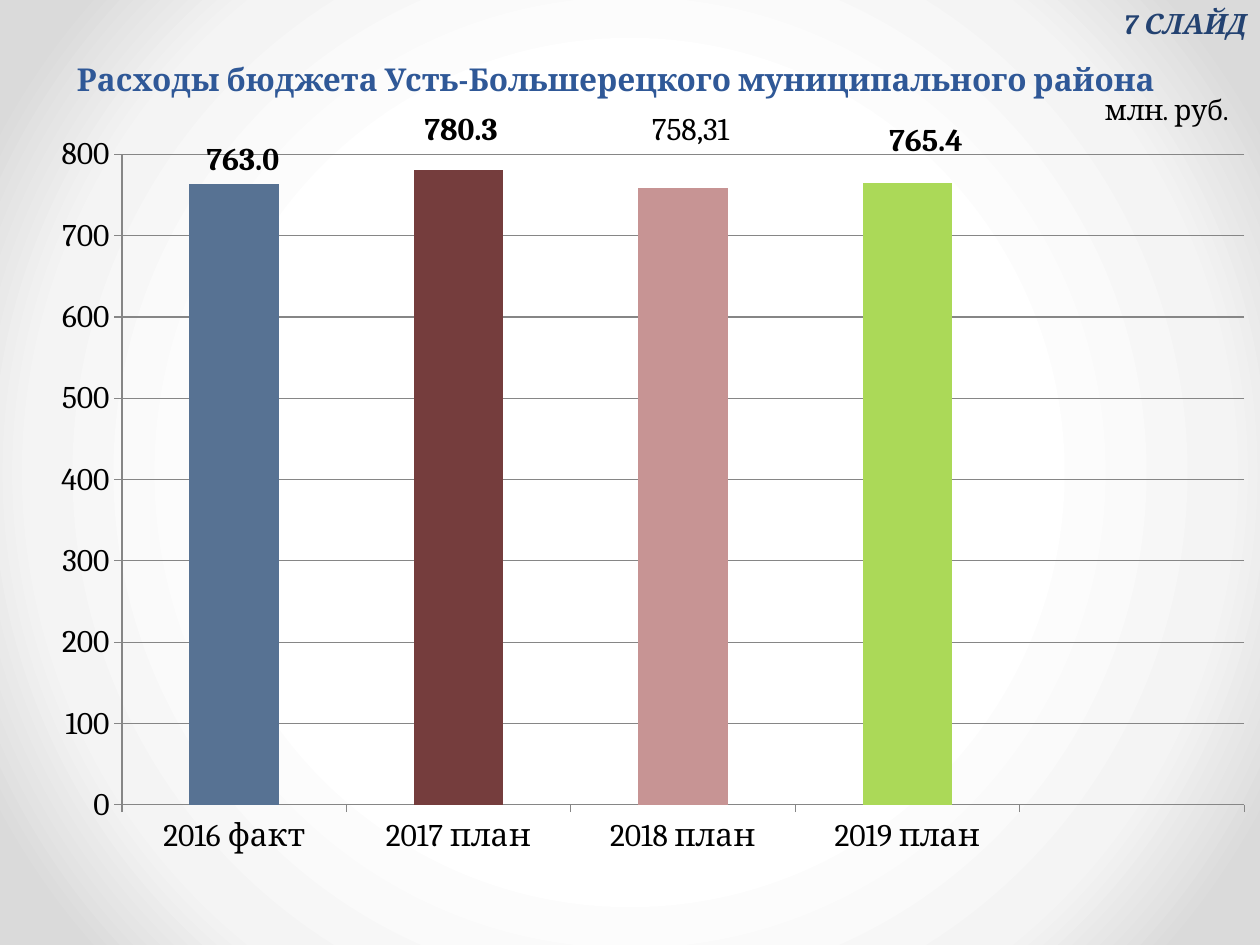
from dataclasses import dataclass

from lxml import etree
from pptx import Presentation
from pptx.chart.data import CategoryChartData
from pptx.dml.color import RGBColor
from pptx.enum.chart import XL_CHART_TYPE, XL_TICK_MARK
from pptx.enum.text import MSO_ANCHOR, PP_ALIGN
from pptx.oxml import parse_xml
from pptx.oxml.ns import nsdecls, qn
from pptx.util import Inches, Pt

STACKED = XL_CHART_TYPE.COLUMN_STACKED
OUTSIDE = XL_TICK_MARK.OUTSIDE
LEFT, RIGHT = PP_ALIGN.LEFT, PP_ALIGN.RIGHT
TOP = MSO_ANCHOR.TOP


@dataclass(frozen=True)
class Theme:
    font: str = "Cambria"
    head: str = "2F5897"
    tag: str = "234271"
    ink: str = "000000"
    grid: str = "868686"
    large: int = 18
    small: int = 16
    back: tuple = ((50, "FFFFFF"), (76, "F4F4F4"), (92, "DADADA"))


THEME = Theme()

# Category, value, bar colour, label shift from bar centre, custom label
BARS = [
    ("2016 факт", 763.0, "577293", (0.007, -0.389), None),
    ("2017 план", 780.3, "753D3D", (0.002, -0.416), None),
    ("2018 план", 758.3, "C79494", (0.006, -0.427), "758,31"),
    ("2019 план", 765.4, "ABD958", (0.015, -0.411), None),
]


def style(font, size, color, bold=False, italic=False):
    font.name, font.size = THEME.font, Pt(size)
    font.bold, font.italic = bold, italic
    font.color.rgb = RGBColor.from_string(color)


def paint_back(slide):
    """Radial gradient, light in the centre."""
    stops = "".join(
        f'<a:gs pos="{pos * 1000}"><a:srgbClr val="{color}"/></a:gs>'
        for pos, color in THEME.back)
    fill = slide.background.fill
    fill.solid()
    old = slide._element.find(".//" + qn("p:bgPr")).find(qn("a:solidFill"))
    old.getparent().replace(old, parse_xml(
        f'<a:gradFill {nsdecls("a")} rotWithShape="1"><a:gsLst>{stops}</a:gsLst>'
        '<a:path path="circle"><a:fillToRect l="50000" t="50000" r="50000"'
        ' b="50000"/></a:path></a:gradFill>'))


def fill_layout(layout, **parts):
    """Write a manual chart layout."""
    box = etree.SubElement(layout, qn("c:manualLayout"))
    for name, value in parts.items():
        etree.SubElement(box, qn("c:" + name)).set("val", str(value))


def hide_leaders(series):
    """Turn off the lines from moved labels to their bars."""
    group = series._element.find(qn("c:dLbls"))
    for node in group.findall(qn("c:showLeaderLines")):
        node.set("val", "0")
    group.append(parse_xml(
        f'<c:extLst {nsdecls("c")}>'
        '<c:ext uri="{CE6537A1-D6FC-4f65-9D91-7224C49458BB}" xmlns:c15='
        '"http://schemas.microsoft.com/office/drawing/2012/chart">'
        '<c15:showLeaderLines val="0"/></c:ext></c:extLst>'))


def add_title(slide, box):
    title = slide.shapes.title
    title.left, title.top, title.width, title.height = box
    frame = title.text_frame
    frame.text = "Расходы бюджета Усть-Большерецкого муниципального района"
    frame.vertical_anchor, frame.margin_top = TOP, Inches(0.12)
    line = frame.paragraphs[0]
    line.alignment = LEFT
    style(line.runs[0].font, THEME.large, THEME.head, bold=True)


def add_tag(slide, box):
    frame = slide.shapes.add_textbox(*box).text_frame
    frame.word_wrap = True
    frame.text = "7 СЛАЙД"
    line = frame.paragraphs[0]
    line.alignment = RIGHT
    style(line.runs[0].font, THEME.small, THEME.tag, bold=True, italic=True)


def format_axes(chart):
    grid = RGBColor.from_string(THEME.grid)
    rows, cats = chart.value_axis, chart.category_axis
    rows.minimum_scale, rows.maximum_scale, rows.major_unit = 0, 800, 100
    rows.has_major_gridlines = True
    rows.tick_labels.number_format = "#,##0"
    rows.tick_labels.number_format_is_linked = False
    for axis in (rows, cats):
        axis.major_tick_mark = OUTSIDE
        style(axis.tick_labels.font, THEME.large, THEME.ink)
    for line in (rows.format.line, cats.format.line,
                 rows.major_gridlines.format.line):
        line.color.rgb, line.width = grid, Pt(0.75)


def format_bars(plot):
    plot.gap_width, plot.overlap = 150, 100
    plot.vary_by_categories = False
    series = plot.series[0]
    labels = series.data_labels
    labels.show_value = True
    labels.number_format, labels.number_format_is_linked = "#,##0.0", False
    style(labels.font, THEME.large, THEME.ink, bold=True)
    for index, (_, _, color, (dx, dy), text) in enumerate(BARS):
        point = series.points[index]
        point.format.fill.solid()
        point.format.fill.fore_color.rgb = RGBColor.from_string(color)
        label = point.data_label
        if text:
            label.text_frame.text = text
            style(label.text_frame.paragraphs[0].runs[0].font,
                  THEME.large, THEME.ink)
        else:
            style(label.font, THEME.large, THEME.ink, bold=True)
        # Shift the label above its bar
        node = series._element.findall(".//" + qn("c:dLbl"))[index]
        layout = etree.Element(qn("c:layout"))
        fill_layout(layout, x=dx, y=dy)
        node.find(qn("c:idx")).addnext(layout)
        if not text:
            form = etree.Element(qn("c:numFmt"), formatCode="#,##0.0",
                                 sourceLinked="0")
            layout.addnext(form)
    hide_leaders(series)


def add_bars(slide, box):
    data = CategoryChartData(number_format="#,##0.0")
    # The last slot stays empty
    data.categories = [bar[0] for bar in BARS] + [""]
    data.add_series("Series 1", [bar[1] for bar in BARS] + [None])
    chart = slide.shapes.add_chart(STACKED, *box, data).chart
    chart.has_legend = False
    style(chart.font, THEME.large, THEME.ink)
    format_axes(chart)
    format_bars(chart.plots[0])

    # Unit shown as the chart title, top right
    chart.has_title = True
    title = chart.chart_title
    title.text_frame.text = "млн. руб."
    style(title.text_frame.paragraphs[0].runs[0].font, THEME.small, THEME.ink)
    fill_layout(title._element.find(qn("c:layout")),
                xMode="edge", yMode="edge", x=0.884, y=0.002)
    title._element.find(qn("c:overlay")).set("val", "1")

    # Plot area
    area = chart._chartSpace.find(".//" + qn("c:plotArea"))
    layout = area.find(qn("c:layout"))
    if layout is None:
        layout = etree.Element(qn("c:layout"))
        area.insert(0, layout)
    fill_layout(layout, layoutTarget="inner", xMode="edge", yMode="edge",
                x=0.098, y=0.08, w=0.902, h=0.757)


def main():
    deck = Presentation()
    deck.slide_width, deck.slide_height = Inches(10), Inches(7.5)
    slide = deck.slides.add_slide(deck.slide_layouts[5])
    paint_back(slide)
    add_title(slide, [Inches(n) for n in (0.51, 0.36, 9, 1.26)])
    add_bars(slide, [Inches(n) for n in (0, 0.68, 9.88, 6.82)])
    add_tag(slide, [Inches(n) for n in (8.72, 0, 1.27, 0.37)])
    deck.save("out.pptx")


if __name__ == "__main__":
    main()
